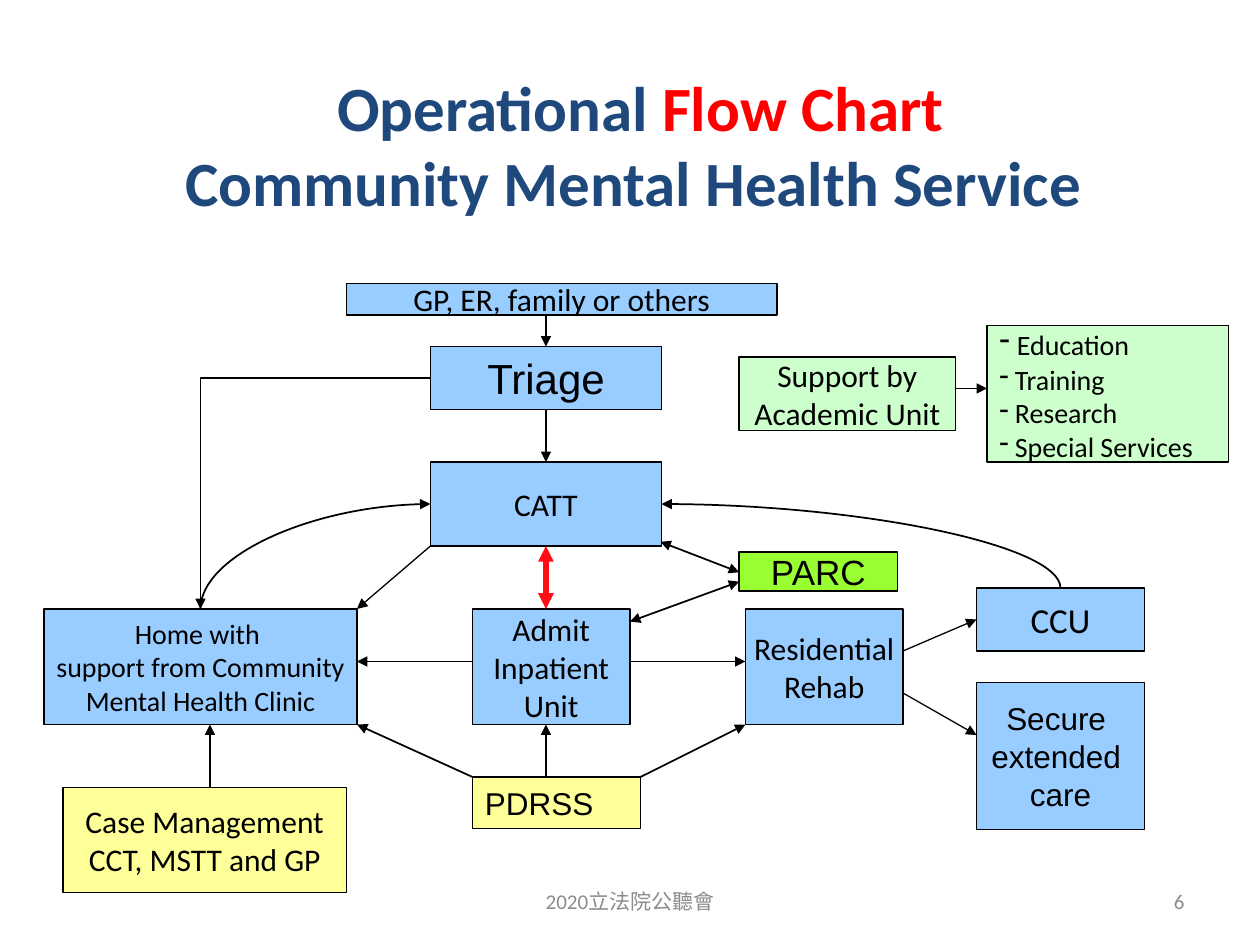
import lxml.etree
import pptx
import pptx.dml.color
import pptx.enum.shapes
import pptx.enum.text
import pptx.oxml.ns
import pptx.util

THEME = {
    "blue": "99CCFF", "mint": "CCFFCC", "yellow": "FFFF99", "lime": "99FF33",
    "black": "000000", "navy": "1F497D", "red": "FF0000", "arrow": "FF0C14", "grey": "8C8C8C",
    "title": 36, "triage": 24, "large": 20, "body": 18, "small": 16, "footer": 12,
    "sans": "Calibri", "arial": "Arial",
}
COLS, ROWS = 120, 90
qn = pptx.oxml.ns.qn
ALIGN = pptx.enum.text.PP_ALIGN
KIND = pptx.enum.shapes.MSO_CONNECTOR

prs = pptx.Presentation()
prs.slide_width, prs.slide_height = pptx.util.Inches(10), pptx.util.Inches(7.5)
slide = prs.slides.add_slide(prs.slide_layouts[6])


def grid(x, y):
    return int(prs.slide_width * x / COLS), int(prs.slide_height * y / ROWS)


def write(s, lines, size, font="sans", align=ALIGN.CENTER, color="black", wrap=True):
    tf = s.text_frame
    tf.word_wrap = wrap
    tf.vertical_anchor = pptx.enum.text.MSO_ANCHOR.MIDDLE
    for i, line in enumerate(lines):
        p = tf.paragraphs[0] if i == 0 else tf.add_paragraph()
        p.alignment = align
        p.font.size = pptx.util.Pt(THEME[size])
        p.font.name = THEME[font]
        p.font.color.rgb = pptx.dml.color.RGBColor.from_string(THEME[color])
        p.add_run().text = line
    return tf


s = slide.shapes.add_textbox(*grid(10, 6.2), *grid(102, 15))
p = write(s, ["Operational "], "title", color="navy").paragraphs[0]
p.add_run().text = "Flow Chart"
p.add_line_break()
p.add_run().text = "Community Mental Health Service "
p.font.bold = True
for r, color in zip(p.runs, ["navy", "red", "navy"]):
    r.font.color.rgb = pptx.dml.color.RGBColor.from_string(THEME[color])

boxes = [
    (["Home with ", "support from Community", "Mental Health Clinic"],
     4.2, 58, 29.8, 11, "blue", "small", "sans"),
    (["Admit", "Inpatient", "Unit"], 45, 58, 15, 11, "blue", "body", "sans"),
    (["Residential", "Rehab"], 71, 58, 15, 11, "blue", "body", "sans"),
    (["CCU"], 93, 56, 16, 6, "blue", "large", "sans"),
    (["Secure ", "extended ", "care"], 93, 65, 16, 14, "blue", "body", "arial"),
    (["Case Management", "CCT, MSTT and GP"], 6, 75, 27, 10, "yellow", "body", "sans"),
    (["GP, ER, family or others"], 33, 27, 41, 3, "blue", "body", "sans"),
    (["Triage"], 41, 33, 22, 6, "blue", "triage", "arial"),
    (["CATT"], 41, 44, 22, 8, "blue", "body", "sans"),
    (["Support by", "Academic Unit"], 70.4, 34, 20.6, 7, "mint", "body", "sans"),
    (["PARC"], 70.4, 52.6, 15.1, 3.7, "lime", "large", "arial"),
    (["PDRSS"], 45, 74, 16, 4.9, "yellow", "body", "arial"),
    ([" Education", " Training", " Research", " Special Services"],
     94, 31, 23, 13, "mint", "small", "sans"),
]
for lines, x, y, w, h, fill, size, font in boxes:
    s = slide.shapes.add_shape(
        pptx.enum.shapes.MSO_SHAPE.RECTANGLE, *grid(x, y), *grid(w, h))
    s.element.remove(s.element.find(qn("p:style")))
    s.shadow.inherit = False
    s.fill.solid()
    s.fill.fore_color.rgb = pptx.dml.color.RGBColor.from_string(THEME[fill])
    s.line.color.rgb = pptx.dml.color.RGBColor.from_string(THEME["black"])
    s.line.width = pptx.util.Pt(1 if lines[0] in ("PDRSS", "PARC") else 0.75)
    left = lines[0] in ("PDRSS", " Education")
    tf = write(s, lines, size, font, ALIGN.LEFT if left else ALIGN.CENTER, wrap=left)

for p in tf.paragraphs:
    pPr = p._p.get_or_add_pPr()
    pPr.set("marL", "0")
    pPr.set("indent", "0")
    bullet = lxml.etree.Element(qn("a:buChar"), char="-")
    pPr.insert(0, bullet)
p = tf.paragraphs[0]
p.runs[0].text = " "
p.add_run().text = "Education"
for r, size in zip(p.runs, ["body", "small"]):
    r.font.size = pptx.util.Pt(THEME[size])

links = [
    (KIND.STRAIGHT, 86, 62, 93, 59, "black", 0.75, "tail"),
    (KIND.STRAIGHT, 86, 66, 93, 70, "black", 0.75, "tail"),
    (KIND.STRAIGHT, 52, 30, 52, 33, "black", 0.75, "tail"),
    (KIND.STRAIGHT, 41, 52, 34, 58, "black", 0.75, "tail"),
    (KIND.STRAIGHT, 61, 74, 71, 69, "black", 1, "tail"),
    (KIND.STRAIGHT, 45, 74, 34, 69, "black", 1, "tail"),
    (KIND.STRAIGHT, 52, 74, 52, 69, "black", 1, "tail"),
    (KIND.STRAIGHT, 20, 75, 20, 69, "black", 1, "tail"),
    (KIND.STRAIGHT, 91, 37, 94, 37, "black", 1, "tail"),
    (KIND.STRAIGHT, 45, 63, 34, 63, "black", 1, "tail"),
    (KIND.STRAIGHT, 60, 63, 71, 63, "black", 1, "tail"),
    (KIND.STRAIGHT, 52, 39, 52, 44, "black", 1, "tail"),
    (KIND.STRAIGHT, 52, 58, 52, 52, "arrow", 3, "head tail"),
    (KIND.STRAIGHT, 60, 59.2, 70.4, 55.4, "black", 1, "head tail"),
    (KIND.STRAIGHT, 62.9, 51.6, 70.4, 54.5, "black", 1, "head tail"),
    (KIND.CURVE, 41, 48, 19.1, 58, "black", 1, "head"),
    (KIND.CURVE, 63, 48, 101, 56, "black", 1, "head"),
    (KIND.ELBOW, 41, 36, 19.1, 58, "black", 1, "tail"),
]
for kind, x1, y1, x2, y2, color, width, ends in links:
    s = slide.shapes.add_connector(kind, *grid(x1, y1), *grid(x2, y2))
    s.element.remove(s.element.find(qn("p:style")))
    s.line.color.rgb = pptx.dml.color.RGBColor.from_string(THEME[color])
    s.line.width = pptx.util.Pt(width)
    for end in ends.split():
        lxml.etree.SubElement(s.line._get_or_add_ln(), qn(f"a:{end}End"), type="triangle")
    lxml.etree.SubElement(s.element.spPr, qn("a:effectLst"))
    geom = s.element.spPr.find(qn("a:prstGeom"))
    geom.set("prst", geom.get("prst").replace("Connector3", "Connector2"))

for text, x, w, align in [("2020立法院公聽會", 41, 38, ALIGN.CENTER), ("6", 86, 28, ALIGN.RIGHT)]:
    s = slide.shapes.add_textbox(*grid(x, 83.4), *grid(w, 4.8))
    write(s, [text], "footer", align=align, color="grey")

prs.save("out.pptx")
